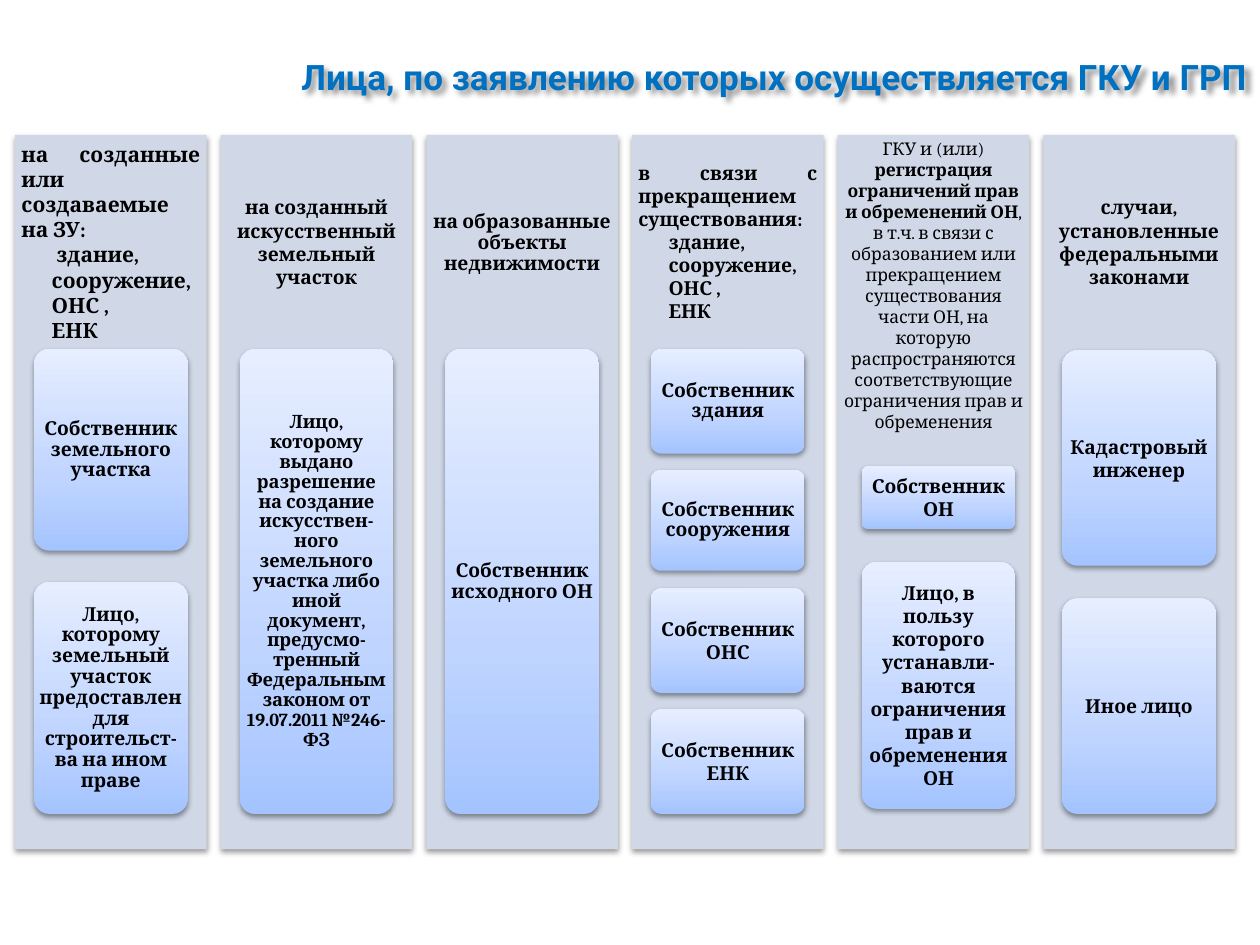
"""Build the slide on who applies for cadastral registration, as six columns of cards."""
from lxml.etree import SubElement
from pptx import Presentation
from pptx.dml.color import RGBColor
from pptx.enum.shapes import MSO_SHAPE
from pptx.enum.text import MSO_ANCHOR, PP_ALIGN
from pptx.oxml.ns import qn
from pptx.util import Inches, Pt

TITLE = "Лица, по заявлению которых осуществляется ГКУ и ГРП"
LEFT, CENTER, JUSTIFY = PP_ALIGN.LEFT, PP_ALIGN.CENTER, PP_ALIGN.JUSTIFY
CARD_STOPS = [(0, "A4C4FF"), (35, "BFD4FF"), (100, "E6EEFF")]

PANEL_LEFT, PANEL_TOP, PANEL_WIDTH, PANEL_HEIGHT = 0.12, 1.07, 1.52, 5.67
PANEL_PITCH = 1.632
CARD_WIDTH, CARD_OFFSET = 1.22, 0.15

# heading: (text or runs, alignment, line spacing); cards: (paragraphs, top, height, size, line spacing)
COLUMNS = [
    {"size": 12,
     "heading": [("на созданные или создаваемые на ЗУ:", JUSTIFY, 1), (" здание,", LEFT, 1),
                 ("сооружение,", LEFT, 1), ("ОНС ,", LEFT, 1), ("ЕНК", LEFT, 1)],
     "cards": [(["Собственник земельного участка"], 2.77, 1.6, 11, 0.9),
               (["Лицо, которому земельный участок предоставлен для строительст-ва на ином праве"],
                4.62, 1.84, 11, 0.9)]},
    {"heading": [("на созданный искусственный", CENTER, 1), ("земельный участок", CENTER, 1)],
     "cards": [(["Лицо, которому выдано разрешение на создание искусствен-ного земельного участка "
                 "либо иной документ, предусмо-тренный Федеральным законом от 19.07.2011 №246-ФЗ"],
                2.77, 3.69, 10.5, 0.9)]},
    {"heading": [("на образованные", CENTER, 1), ("объекты недвижимости", CENTER, 0.9)],
     "cards": [(["Собственник исходного ОН"], 2.77, 3.69, 11, 0.9)]},
    {"heading": [("в связи с прекращением существования:", JUSTIFY, 1), ("здание,", LEFT, 1),
                 ("сооружение,", LEFT, 1), ("ОНС ,", LEFT, 1), ("ЕНК", LEFT, 1)],
     "cards": [(["Собственник здания"], 2.77, 0.83, 11, 0.9),
               (["Собственник сооружения"], 3.73, 0.8, 11, 0.9),
               (["Собственник", "ОНС"], 4.67, 0.83, 11, 1),
               (["Собственник", "ЕНК"], 5.63, 0.83, 11, 1)]},
    {"size": 10, "heading_height": 2.38, "inset": 0.04, "card_offset": 0.19,
     "heading": [([("ГКУ и (или) ", False),
                   ("регистрация ограничений прав и обременений ОН", True),
                   (", в т.ч. в связи с образованием или прекращением существования части ОН, "
                    "на которую распространяются соответствующие ограничения прав и обременения",
                    False)], CENTER, 1)],
     "cards": [(["Собственник ОН"], 3.7, 0.5, 11, 1),
               (["Лицо, в пользу которого устанавли-ваются ограничения прав и обременения ОН"],
                4.46, 1.96, 11, 1)]},
    {"heading": [("случаи, установленные федеральными законами", CENTER, 1)],
     "cards": [(["Кадастровый инженер"], 2.78, 1.71, 11, 1),
               (["Иное лицо"], 4.75, 1.71, 11, 1)]},
]


def color(value):
    return RGBColor.from_string(value)


def add_shadow(shape, blur, distance, angle, opacity):
    shape.shadow.inherit = False
    effects = shape._element.spPr.find(qn("a:effectLst"))
    shadow = SubElement(effects, qn("a:outerShdw"), blurRad=str(Pt(blur)), dist=str(Pt(distance)),
                        dir=str(angle * 60000), rotWithShape="0")
    tint = SubElement(shadow, qn("a:srgbClr"), val="000000")
    SubElement(tint, qn("a:alpha"), val=str(opacity * 1000))


def add_block(slide, kind, left, top, width, height):
    shape = slide.shapes.add_shape(kind, Inches(left), Inches(top), Inches(width), Inches(height))
    shape.line.fill.background()
    add_shadow(shape, 3.1, 1.6, 90, 38)
    return shape


def fill_gradient(shape):
    shape.fill.gradient()
    shape.fill.gradient_angle = 90
    stops = shape._element.spPr.find(qn("a:gradFill")).find(qn("a:gsLst"))
    for stop in list(stops):
        stops.remove(stop)
    for position, value in CARD_STOPS:
        stop = SubElement(stops, qn("a:gs"), pos=str(position * 1000))
        SubElement(stop, qn("a:srgbClr"), val=value)


def write_text(shape, paragraphs, size, inset_x, inset_y):
    frame = shape.text_frame
    frame.word_wrap = True
    frame.vertical_anchor = MSO_ANCHOR.MIDDLE
    frame.margin_left = frame.margin_right = Inches(inset_x)
    frame.margin_top = frame.margin_bottom = Inches(inset_y)
    for index, (content, alignment, spacing) in enumerate(paragraphs):
        paragraph = frame.paragraphs[0] if index == 0 else frame.add_paragraph()
        paragraph.alignment = alignment
        paragraph.line_spacing = spacing
        if alignment == LEFT:
            properties = paragraph._p.get_or_add_pPr()
            properties.set("marL", str(Inches(0.24)))
            properties.set("indent", "0")
        font = paragraph.font
        font.name, font.size = "Cambria", Pt(size)
        font.color.rgb = color("000000")
        if isinstance(content, str):
            font.bold = True
            paragraph.add_run().text = content
            continue
        for text, bold in content:
            run = paragraph.add_run()
            run.text = text
            run.font.bold = bold


def add_column(slide, left, column):
    panel = add_block(slide, MSO_SHAPE.RECTANGLE, left, PANEL_TOP, PANEL_WIDTH, PANEL_HEIGHT)
    panel.fill.solid()
    panel.fill.fore_color.rgb = color("D0D8E8")
    heading = slide.shapes.add_textbox(Inches(left), Inches(PANEL_TOP), Inches(PANEL_WIDTH),
                                       Inches(column.get("heading_height", 1.7)))
    inset = column.get("inset", 0.05)
    write_text(heading, column["heading"], column.get("size", 11), inset, inset)
    card_left = left + column.get("card_offset", CARD_OFFSET)
    for texts, top, height, size, spacing in column["cards"]:
        card = add_block(slide, MSO_SHAPE.ROUNDED_RECTANGLE, card_left, top, CARD_WIDTH, height)
        card.adjustments[0] = 0.1
        fill_gradient(card)
        write_text(card, [(text, CENTER, spacing) for text in texts], size, 0, 0)


def add_title(slide):
    title = slide.shapes.title
    title.left, title.top = Inches(0.94), Inches(0.29)
    title.width, title.height = Inches(9.06), Inches(0.63)
    title.text_frame.text = TITLE
    title.text_frame.vertical_anchor = MSO_ANCHOR.MIDDLE
    add_shadow(title, 3, 3, 45, 43)
    paragraph = title.text_frame.paragraphs[0]
    paragraph.alignment = PP_ALIGN.RIGHT
    font = paragraph.font
    font.name, font.size, font.bold = "Roboto", Pt(20), True
    font.color.rgb = color("0070C0")


def main():
    presentation = Presentation()
    presentation.slide_width, presentation.slide_height = Inches(10), Inches(7.5)
    slide = presentation.slides.add_slide(presentation.slide_layouts[5])
    add_title(slide)
    for index, column in enumerate(COLUMNS):
        add_column(slide, PANEL_LEFT + index * PANEL_PITCH, column)
    presentation.save("out.pptx")


if __name__ == "__main__":
    main()
